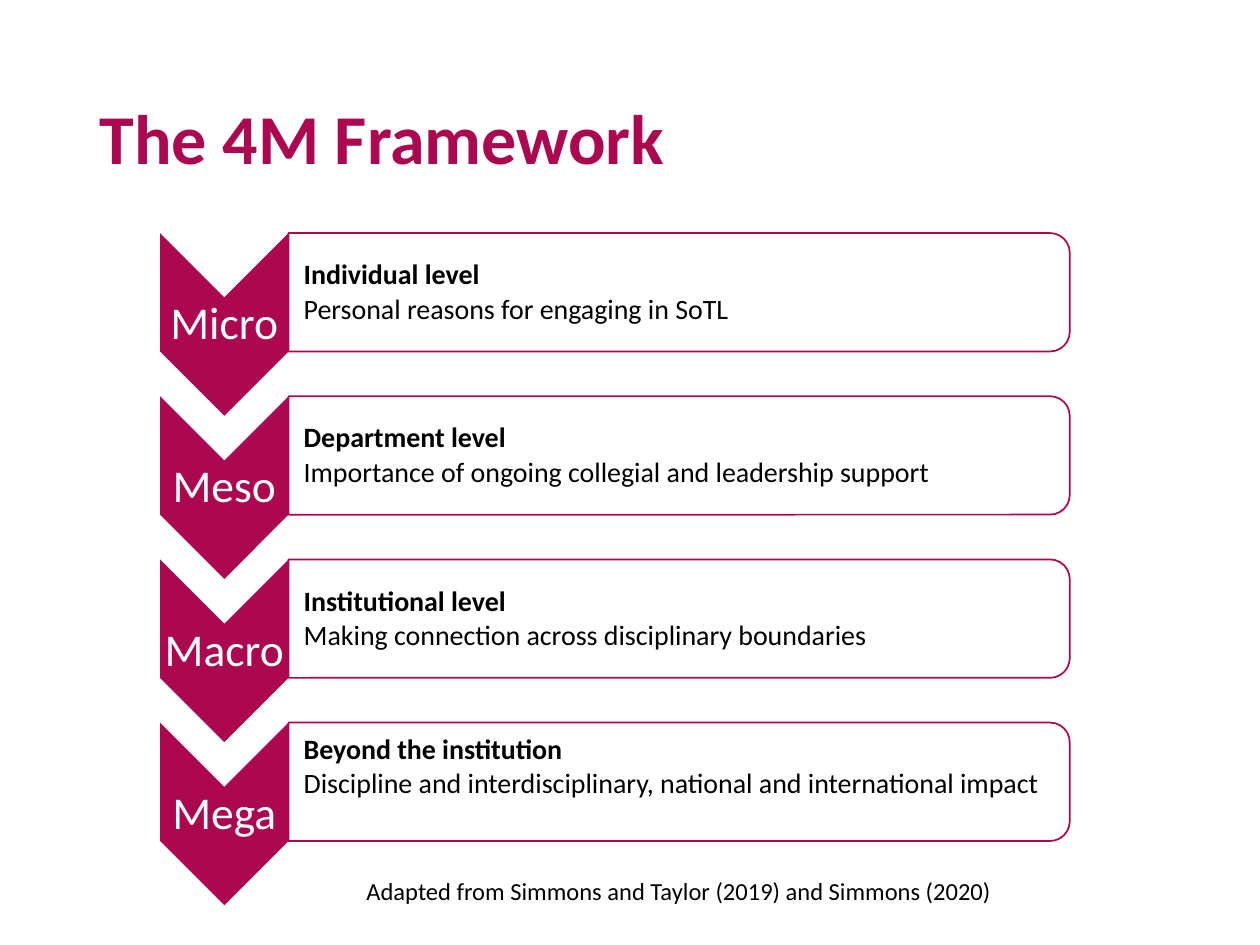
from pptx import Presentation
from pptx.dml.color import RGBColor
from pptx.enum.shapes import MSO_SHAPE
from pptx.enum.text import MSO_ANCHOR, PP_ALIGN
from pptx.util import Inches, Pt

CRIMSON = RGBColor(0xAB, 0x08, 0x4F)
WHITE = RGBColor(0xFF, 0xFF, 0xFF)
BLACK = RGBColor(0x00, 0x00, 0x00)


def write(box, lines, size, color, bold_first=False, align=PP_ALIGN.LEFT,
          anchor=MSO_ANCHOR.MIDDLE, margins=(0.1, 0.05, 0.1, 0.05), spacing=0.9, after=0):
    frame = box.text_frame
    frame.word_wrap = True
    frame.vertical_anchor = anchor
    (frame.margin_left, frame.margin_top,
     frame.margin_right, frame.margin_bottom) = [Inches(margin) for margin in margins]
    for index, line in enumerate(lines):
        para = frame.paragraphs[0] if index == 0 else frame.add_paragraph()
        para.alignment = align
        para.line_spacing = spacing
        para.space_before = Pt(0)
        para.space_after = Pt(after)
        span = para.add_run()
        span.text = line
        span.font.name = "Calibri"
        span.font.size = Pt(size)
        span.font.bold = bold_first and index == 0
        span.font.color.rgb = color


def add_turned_shape(kind, left, top, width, height, fill):
    shape = page.shapes.add_shape(
        kind, Inches(left + (width - height) / 2), Inches(top + (height - width) / 2),
        Inches(height), Inches(width))
    shape.rotation = 90
    shape.shadow.inherit = False
    shape.fill.solid()
    shape.fill.fore_color.rgb = fill
    shape.line.color.rgb = CRIMSON
    shape.line.width = Pt(1)
    return shape


deck = Presentation()
deck.slide_width = Inches(10)
deck.slide_height = Inches(7.5)
page = deck.slides.add_slide(deck.slide_layouts[5])

title = page.shapes.title
title.left, title.top = Inches(0.69), Inches(0.4)
title.width, title.height = Inches(8.62), Inches(1.45)
write(title, ["The 4M Framework"], 40, CRIMSON, bold_first=True)

levels = [
    ("Micro", "Individual level", "Personal reasons for engaging in SoTL", 0.01),
    ("Meso", "Department level", "Importance of ongoing collegial and leadership support", 0.01),
    ("Macro", "Institutional level", "Making connection across disciplinary boundaries", 0.01),
    ("Mega", "Beyond the institution",
     "Discipline and interdisciplinary, national and international impact", 0.25),
]
for row, (name, heading, detail, bottom_margin) in enumerate(levels):
    top = 1.85 + row * 1.295
    chevron = add_turned_shape(MSO_SHAPE.CHEVRON, 1.27, top, 1.02, 1.45, CRIMSON)
    chevron.line.fill.background()
    label = page.shapes.add_textbox(Inches(1.27), Inches(top + 0.51), Inches(1.02), Inches(0.44))
    write(label, [name], 26, WHITE, align=PP_ALIGN.CENTER, margins=(0.02,) * 4)

    add_turned_shape(MSO_SHAPE.ROUND_2_SAME_RECTANGLE, 2.29, top, 6.2, 0.94, WHITE)
    body = page.shapes.add_textbox(Inches(2.29), Inches(top + 0.05), Inches(6.15), Inches(0.85))
    write(body, [heading, detail], 16, BLACK, bold_first=True,
          margins=(0.12, 0.01, 0.01, bottom_margin), after=2.4)

credit = page.shapes.add_textbox(Inches(2.81), Inches(6.9), Inches(6.6), Inches(0.34))
write(credit, ["Adapted from Simmons and Taylor (2019) and Simmons (2020)"], 14, BLACK,
      anchor=MSO_ANCHOR.TOP, spacing=1.0)

deck.save("out.pptx")
